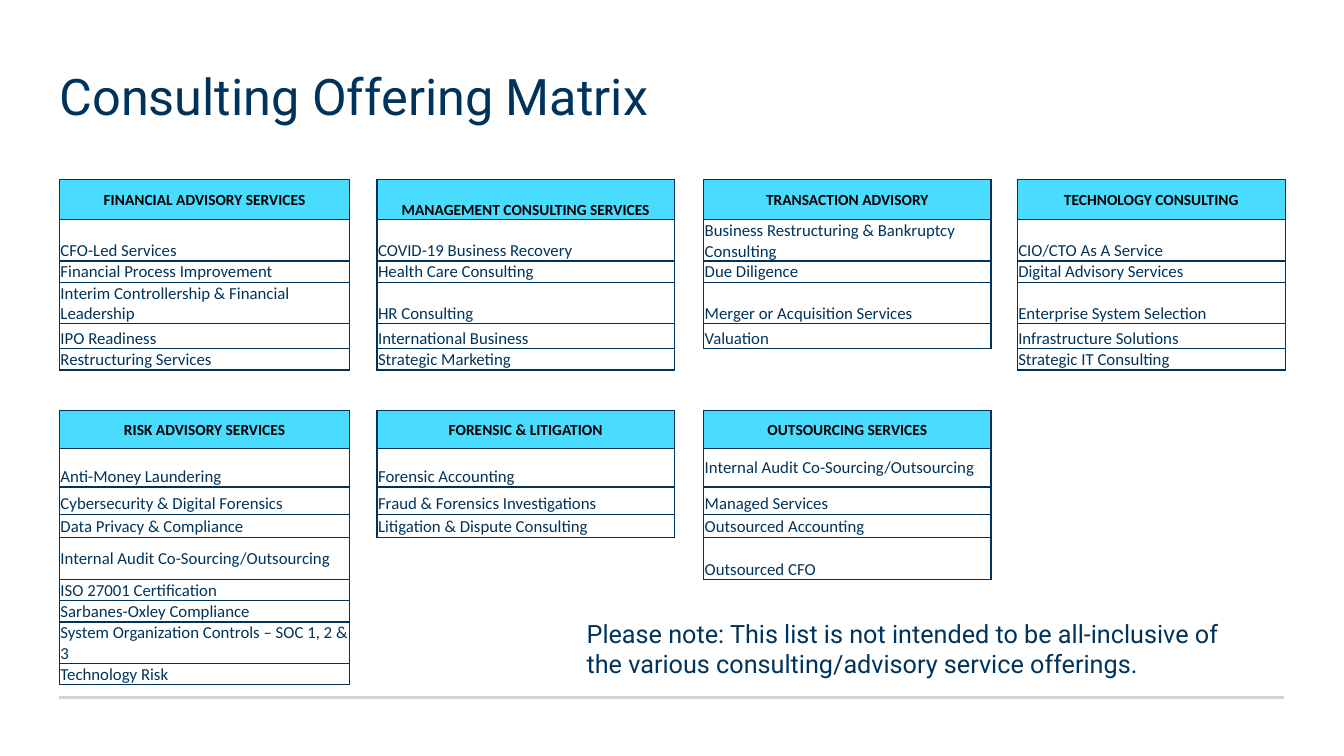
from lxml import etree
from pptx import Presentation
from pptx.dml.color import RGBColor
from pptx.enum.shapes import MSO_CONNECTOR
from pptx.enum.text import MSO_ANCHOR, PP_ALIGN
from pptx.oxml.ns import qn
from pptx.util import Inches, Pt

LEFT, CENTER = PP_ALIGN.LEFT, PP_ALIGN.CENTER
MIDDLE, BOTTOM, TOP = MSO_ANCHOR.MIDDLE, MSO_ANCHOR.BOTTOM, MSO_ANCHOR.TOP
STRAIGHT = MSO_CONNECTOR.STRAIGHT

COLORS = {"navy": "00335B", "cyan": "49DCFF", "black": "000000", "rule": "D7D2CB"}
WIDTHS = [2.88, 0.27, 2.95, 0.29, 2.85, 0.26, 2.66]
HEIGHTS = [0.4, 0.4, 0.2, 0.4, 0.25, 0.2, 0.2, 0.2, 0.38, 0.38, 0.27, 0.23,
           0.42, 0.2, 0.2, 0.24, 0.2]
SIDES = {"a:lnL": (0, -1), "a:lnR": (0, 1), "a:lnT": (-1, 0), "a:lnB": (1, 0)}

BANDS = {
    0: [
        ["FINANCIAL ADVISORY SERVICES", "CFO-Led Services",
         "Financial Process Improvement",
         "Interim Controllership & Financial Leadership",
         "IPO Readiness", "Restructuring Services"],
        ["MANAGEMENT CONSULTING SERVICES", "COVID-19 Business Recovery",
         "Health Care Consulting", "HR Consulting",
         "International Business", "Strategic Marketing"],
        ["TRANSACTION ADVISORY",
         "Business Restructuring & Bankruptcy Consulting",
         "Due Diligence", "Merger or Acquisition Services", "Valuation"],
        ["TECHNOLOGY CONSULTING", "CIO/CTO As A Service",
         "Digital Advisory Services", "Enterprise System Selection",
         "Infrastructure Solutions", "Strategic IT Consulting"],
    ],
    8: [
        ["RISK ADVISORY SERVICES", "Anti-Money Laundering",
         "Cybersecurity & Digital Forensics", "Data Privacy & Compliance",
         "Internal Audit Co-Sourcing/Outsourcing", "ISO 27001 Certification",
         "Sarbanes-Oxley Compliance",
         "System Organization Controls – SOC 1, 2 & 3", "Technology Risk"],
        ["FORENSIC & LITIGATION", "Forensic Accounting",
         "Fraud & Forensics Investigations", "Litigation & Dispute Consulting"],
        ["OUTSOURCING SERVICES", "Internal Audit Co-Sourcing/Outsourcing",
         "Managed Services", "Outsourced Accounting", "Outsourced CFO"],
    ],
}
CENTERED = {"Strategic IT Consulting", "Internal Audit Co-Sourcing/Outsourcing",
            "ISO 27001 Certification", "Technology Risk"}
LOW_HEADS = {"MANAGEMENT CONSULTING SERVICES"}


def color(name):
    return RGBColor.from_string(COLORS[name])


def write(frame, text, size=12, face="Calibri", tint="navy", bold=False,
          align=LEFT, space=None):
    para = frame.paragraphs[0]
    para.alignment = align
    para.line_spacing = space
    run = para.add_run()
    run.text = text
    run.font.size = Pt(size)
    run.font.name = face
    run.font.bold = bold
    run.font.color.rgb = color(tint)


def add_text(slide, text, box, inset=(0, 0), anchor=TOP, **style):
    frame = slide.shapes.add_textbox(*map(Inches, box)).text_frame
    frame.word_wrap = True
    frame.vertical_anchor = anchor
    frame.margin_left = frame.margin_right = Inches(inset[0])
    frame.margin_top = frame.margin_bottom = Inches(inset[1])
    write(frame, text, **style)


def add_rule(slide, left, right, y):
    line = slide.shapes.add_connector(
        STRAIGHT, Inches(left), Inches(y), Inches(right), Inches(y))
    line.line.color.rgb = color("rule")
    line.line.width = Pt(2)
    etree.SubElement(line._element.spPr, qn("a:effectLst"))


def add_edge(cell, side, drawn):
    props = cell._tc.get_or_add_tcPr()
    edge = etree.SubElement(props, qn(side), w=str(Pt(1)))
    if drawn:
        fill = etree.SubElement(edge, qn("a:solidFill"))
        etree.SubElement(fill, qn("a:srgbClr"), val=COLORS["navy"])
    else:
        etree.SubElement(edge, qn("a:noFill"))


def fill_cell(cell, text, head):
    cell.margin_left = cell.margin_right = cell.margin_top = Inches(0.01)
    cell.margin_bottom = 0
    if head:
        cell.fill.solid()
        cell.fill.fore_color.rgb = color("cyan")
        cell.vertical_anchor = BOTTOM if text in LOW_HEADS else MIDDLE
        write(cell.text_frame, text, size=11, tint="black", bold=True, align=CENTER)
        return
    cell.fill.background()
    if text:
        cell.vertical_anchor = MIDDLE if text in CENTERED else BOTTOM
        write(cell.text_frame, text)
    else:
        para = cell.text_frame.paragraphs[0]._p
        etree.SubElement(para, qn("a:endParaRPr"), sz="1000")


def add_matrix(slide, left, top):
    texts = {(start + row, 2 * col): text
             for start, lists in BANDS.items()
             for col, items in enumerate(lists)
             for row, text in enumerate(items)}
    table = slide.shapes.add_table(
        len(HEIGHTS), len(WIDTHS), Inches(left), Inches(top),
        Inches(sum(WIDTHS)), Inches(sum(HEIGHTS))).table
    table.first_row = table.horz_banding = False
    for col, width in zip(table.columns, WIDTHS):
        col.width = Inches(width)
    for row, height in zip(table.rows, HEIGHTS):
        row.height = Inches(height)
    for r in range(len(HEIGHTS)):
        for c in range(len(WIDTHS)):
            cell = table.cell(r, c)
            for side, (down, over) in SIDES.items():
                add_edge(cell, side, (r, c) in texts or (r + down, c + over) in texts)
            text = texts.get((r, c), "")
            fill_cell(cell, text, bool(text) and r in BANDS)


def main():
    deck = Presentation()
    deck.slide_width, deck.slide_height = Inches(13.33), Inches(7.5)
    slide = deck.slides.add_slide(deck.slide_layouts[6])
    add_rule(slide, 0.59, 12.74, 6.92)
    add_text(slide, "Consulting Offering Matrix", (0.59, 0.71, 12.15, 0.55),
             anchor=MIDDLE, size=36, face="Roboto", space=0.9)
    add_matrix(slide, 0.59, 1.78)
    add_text(slide, "Please note: This list is not intended to be all-inclusive of "
             "the various consulting/advisory service offerings.",
             (5.72, 6.08, 6.52, 0.71), inset=(0.1, 0.05), size=18, face="Roboto")
    deck.save("out.pptx")


if __name__ == "__main__":
    main()
